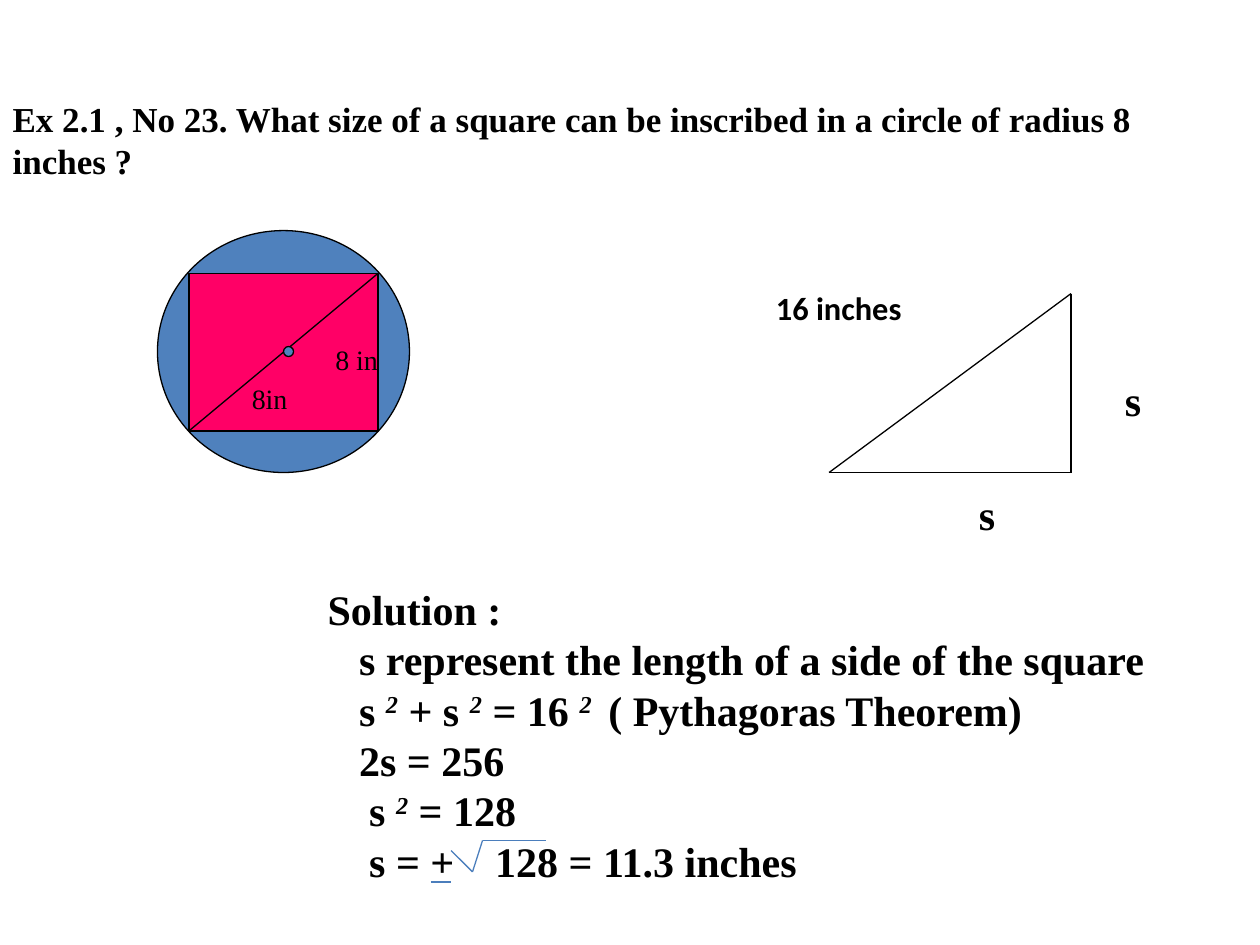
from dataclasses import dataclass
from itertools import pairwise

from lxml import etree
from pptx import Presentation
from pptx.dml.color import RGBColor
from pptx.enum.shapes import MSO_CONNECTOR, MSO_SHAPE
from pptx.enum.text import MSO_ANCHOR, MSO_AUTO_SIZE, PP_ALIGN
from pptx.oxml.ns import qn
from pptx.util import Inches, Pt

OVAL, RECTANGLE = MSO_SHAPE.OVAL, MSO_SHAPE.RECTANGLE
STRAIGHT = MSO_CONNECTOR.STRAIGHT
LEFT, RIGHT = PP_ALIGN.LEFT, PP_ALIGN.RIGHT
TOP, MIDDLE = MSO_ANCHOR.TOP, MSO_ANCHOR.MIDDLE
NO_AUTOFIT = MSO_AUTO_SIZE.NONE


@dataclass(frozen=True)
class Theme:
    ink: RGBColor = RGBColor(0, 0, 0)
    circle: RGBColor = RGBColor(0x4F, 0x81, 0xBD)
    square: RGBColor = RGBColor(0xFF, 0x00, 0x66)
    root_sign: RGBColor = RGBColor(0x4B, 0x7E, 0xBC)
    serif: str = "Times New Roman"
    sans: str = "Calibri"
    small: float = 16
    label: float = 18.5
    question: float = 20
    large: float = 24
    line: float = 0.75


THEME = Theme()

# Each step: indent in inches, then text with exponents between carets
SOLUTION = [
    (0, "Solution :"),
    (0.25, "s represent the length of a side of the square"),
    (0.25, "s ^2^ + s ^2^ = 16 ^2 ^ ( Pythagoras Theorem)"),
    (0.25, "2s = 256"),
    (0.33, "s ^2^ = 128"),
    (0.33, "s = +\t128 = 11.3 inches"),
]
RADICAND_TAB = 1.26


def place(box, left, top, width, height):
    box.left, box.top = Inches(left), Inches(top)
    box.width, box.height = Inches(width), Inches(height)


def add_spans(para, text, *, size, font, bold):
    """Write text, raising every second piece between carets as an exponent."""
    for number, piece in enumerate(text.split("^")):
        span = para.add_run()
        span.text = piece
        span.font.size = Pt(size)
        span.font.name = font
        span.font.bold = bold
        span.font.color.rgb = THEME.ink
        if number % 2:
            span.font.italic = True
            span._r.get_or_add_rPr().set("baseline", "30000")


def set_indent(para, indent, tab):
    """Indent without a bullet, and add a tab stop if one is given."""
    properties = para._p.get_or_add_pPr()
    properties.set("marL", str(Inches(indent)))
    properties.set("indent", "0")
    etree.SubElement(properties, qn("a:buNone"))
    if tab:
        stops = etree.SubElement(properties, qn("a:tabLst"))
        etree.SubElement(stops, qn("a:tab"), pos=str(Inches(tab)), algn="l")


def write(box, lines, *, size=THEME.large, font=THEME.serif, bold=True,
          align=LEFT, anchor=TOP, wrap=False, spacing=1.0, tab=None):
    """Fill a box with (indent, text) lines, or with one plain string."""
    frame = box.text_frame
    frame.word_wrap = wrap
    frame.auto_size = NO_AUTOFIT
    frame.vertical_anchor = anchor
    if isinstance(lines, str):
        lines = [(0, lines)]
    for number, (indent, text) in enumerate(lines):
        para = frame.add_paragraph() if number else frame.paragraphs[0]
        para.alignment = align
        para.line_spacing = spacing
        para.space_before = para.space_after = Pt(0)
        set_indent(para, indent, tab if "\t" in text else None)
        add_spans(para, text, size=size, font=font, bold=bold)


def add_label(page, text, at, **text_format):
    box = page.shapes.add_textbox(*map(Inches, at))
    write(box, text, **text_format)


def add_figure(page, kind, at, fill):
    figure = page.shapes.add_shape(kind, *map(Inches, at))
    figure.shadow.inherit = False
    figure.fill.solid()
    figure.fill.fore_color.rgb = fill
    figure.line.color.rgb = THEME.ink
    figure.line.width = Pt(THEME.line)
    return figure


def add_lines(page, points, color=THEME.ink):
    """Join consecutive points with straight lines."""
    for start, end in pairwise(points):
        line = page.shapes.add_connector(STRAIGHT, *map(Inches, start + end))
        line.line.color.rgb = color
        line.line.width = Pt(THEME.line)
        etree.SubElement(line._element.spPr, qn("a:effectLst"))


def draw_inscribed_square(page):
    left, top, width, height = 1.5, 2.17, 1.5, 1.25
    add_figure(page, OVAL, (1.25, 1.83, 2, 1.92), THEME.circle)
    square = add_figure(page, RECTANGLE, (left, top, width, height), THEME.square)
    square.text_frame.margin_right = 0
    square.text_frame.margin_top = Inches(0.16)
    write(square, "8 in", size=THEME.small, bold=False, align=RIGHT,
          anchor=MIDDLE, wrap=True)
    add_lines(page, [(left, top + height), (left + width, top)])
    add_figure(page, OVAL, (2.25, 2.75, 0.08, 0.08), THEME.circle)
    add_label(page, "8in", (1.9, 2.98, 0.49, 0.37), size=THEME.small, bold=False)


def draw_triangle(page):
    apex, corner, base = (8.5, 2.33), (8.5, 3.75), (6.58, 3.75)
    add_lines(page, [apex, corner, base, apex])
    add_label(page, "16 inches", (6.06, 2.3, 1.59, 0.37), size=THEME.label,
              font=THEME.sans, wrap=True, spacing=0.8)
    for left, top in [(7.67, 3.83), (8.83, 2.92)]:
        add_label(page, "s", (left, top, 0.33, 0.5))


def draw_root_sign(page):
    radical = [(3.58, 6.75), (3.75, 6.92), (3.83, 6.67), (4.33, 6.67)]
    minus_under_plus = [(3.42, 7), (3.58, 7)]
    for points in (radical, minus_under_plus):
        add_lines(page, points, THEME.root_sign)


def main():
    deck = Presentation()
    deck.slide_width, deck.slide_height = Inches(10), Inches(7.5)
    page = deck.slides.add_slide(deck.slide_layouts[1])
    question, solution = page.placeholders
    place(question, 0, 0.72, 10.1, 0.44)
    write(question, "Ex 2.1 , No 23. What size of a square can be inscribed "
          "in a circle of radius 8 inches ?", size=THEME.question)
    place(solution, 2.5, 4.58, 6.75, 2.52)
    write(solution, SOLUTION, wrap=True, tab=RADICAND_TAB)
    draw_inscribed_square(page)
    draw_triangle(page)
    draw_root_sign(page)
    deck.save("out.pptx")


if __name__ == "__main__":
    main()
